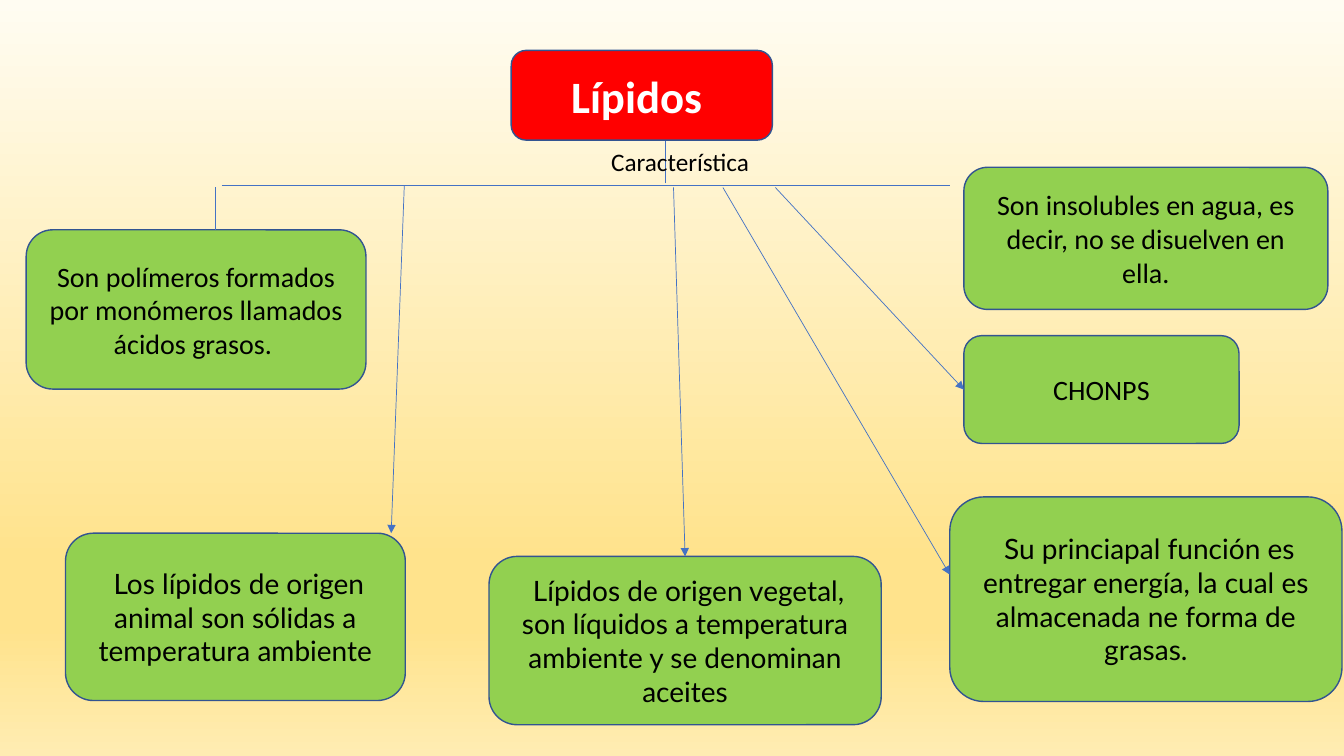
from dataclasses import dataclass

from lxml.etree import SubElement
from pptx import Presentation
from pptx.dml.color import RGBColor
from pptx.enum.shapes import MSO_CONNECTOR as Connector, MSO_SHAPE as Shape
from pptx.enum.text import MSO_ANCHOR as Anchor, MSO_AUTO_SIZE as AutoSize, PP_ALIGN as Align
from pptx.oxml.ns import qn
from pptx.util import Emu, Pt

PX = 9144
TOP, LEFT = 0, 1


@dataclass(frozen=True)
class Theme:
    background: tuple = ((0, "FFFCF2"), (74, "FFE38C"), (83, "FFE38C"), (100, "FFECB2"))
    title_fill: str = "FF0000"
    fact_fill: str = "92D050"
    outline: str = "325491"
    connector: str = "4472C4"
    light: str = "FFFFFF"
    dark: str = "000000"
    font: str = "Calibri"
    alternate_font: str = "Lato"
    title_size: int = 32
    fact_size: int = 20
    label_size: int = 18
    outline_width: float = 1
    connector_width: float = 0.5


class ConceptMap:
    def __init__(self, deck, theme):
        self.theme = theme
        self.page = deck.slides.add_slide(deck.slide_layouts[6])

    def lengths(self, *values):
        return [Emu(value * PX) for value in values]

    def background(self):
        fill = self.page.background.fill
        fill.gradient()
        fill.gradient_angle = 270
        stops = self.page.element.find(".//" + qn("a:gsLst"))
        for stop in list(stops):
            stops.remove(stop)
        for position, color in self.theme.background:
            stop = SubElement(stops, qn("a:gs"), pos=str(position * 1000))
            SubElement(stop, qn("a:srgbClr"), val=color)

    def add_text(self, frame, text, size, color, font, bold=False):
        frame.word_wrap = True
        para = frame.paragraphs[0]
        para.alignment = Align.CENTER
        span = para.add_run()
        span.text = text
        span.font.name = font
        span.font.size = Pt(size)
        span.font.bold = bold
        span.font.color.rgb = RGBColor.from_string(color)

    def box(self, bounds, text, fill, size, color, font, bold=False):
        box = self.page.shapes.add_shape(Shape.ROUNDED_RECTANGLE, *self.lengths(*bounds))
        box.shadow.inherit = False
        box.fill.solid()
        box.fill.fore_color.rgb = RGBColor.from_string(fill)
        box.line.color.rgb = RGBColor.from_string(self.theme.outline)
        box.line.width = Pt(self.theme.outline_width)
        box.text_frame.vertical_anchor = Anchor.MIDDLE
        self.add_text(box.text_frame, text, size, color, font, bold)
        return box

    def title(self, bounds, text):
        theme = self.theme
        return self.box(bounds, text, theme.title_fill, theme.title_size, theme.light, theme.font, True)

    def fact(self, bounds, text, font=None):
        theme = self.theme
        return self.box(bounds, text, theme.fact_fill, theme.fact_size, theme.dark, font or theme.font)

    def label(self, bounds, text):
        box = self.page.shapes.add_textbox(*self.lengths(*bounds))
        box.text_frame.auto_size = AutoSize.SHAPE_TO_FIT_TEXT
        self.add_text(box.text_frame, text, self.theme.label_size, self.theme.dark, self.theme.font)

    def line(self, start, end):
        line = self.page.shapes.add_connector(Connector.STRAIGHT, *self.lengths(*start, *end))
        line.line.color.rgb = RGBColor.from_string(self.theme.connector)
        line.line.width = Pt(self.theme.connector_width)
        SubElement(line.element.spPr, qn("a:effectLst"))
        return line

    def arrow(self, start, end, target=None, side=TOP):
        arrow = self.line(start, end)
        SubElement(arrow.element.spPr.find(qn("a:ln")), qn("a:tailEnd"), type="triangle")
        if target is not None:
            arrow.end_connect(target, side)


def main():
    deck = Presentation()
    deck.slide_width, deck.slide_height = Emu(1333 * PX), Emu(750 * PX)
    theme = Theme()
    concept = ConceptMap(deck, theme)
    concept.background()

    concept.title((507, 50, 259, 89), "Lípidos ")
    concept.fact((26, 228, 337, 158), "Son polímeros formados por monómeros llamados ácidos grasos. ")
    concept.fact((956, 166, 361, 141), "Son insolubles en agua, es decir, no se disuelven en ella.")
    concept.fact((65, 529, 337, 166),
                 " Los lípidos de origen animal son sólidas a temperatura ambiente", theme.alternate_font)
    vegetable = concept.fact(
        (485, 552, 389, 167),
        " Lípidos de origen vegetal, son líquidos a temperatura ambiente y se denominan aceites",
        theme.alternate_font)
    concept.fact((942, 493, 389, 203),
                 " Su princiapal función es entregar energía, la cual es almacenada ne forma de grasas.",
                 theme.alternate_font)
    elements = concept.fact((956, 333, 273, 107), "CHONPS")

    concept.line((220, 184), (942, 184))
    concept.line((214, 186), (214, 228))
    concept.arrow((401, 184), (388, 529))
    concept.arrow((668, 186), (680, 552), vegetable, TOP)
    concept.arrow((769, 186), (956, 386), elements, LEFT)
    concept.arrow((717, 186), (942, 570))
    concept.line((660, 182), (660, 140))
    concept.label((519, 140, 311, 40), "Característica")

    deck.save("out.pptx")


if __name__ == "__main__":
    main()
